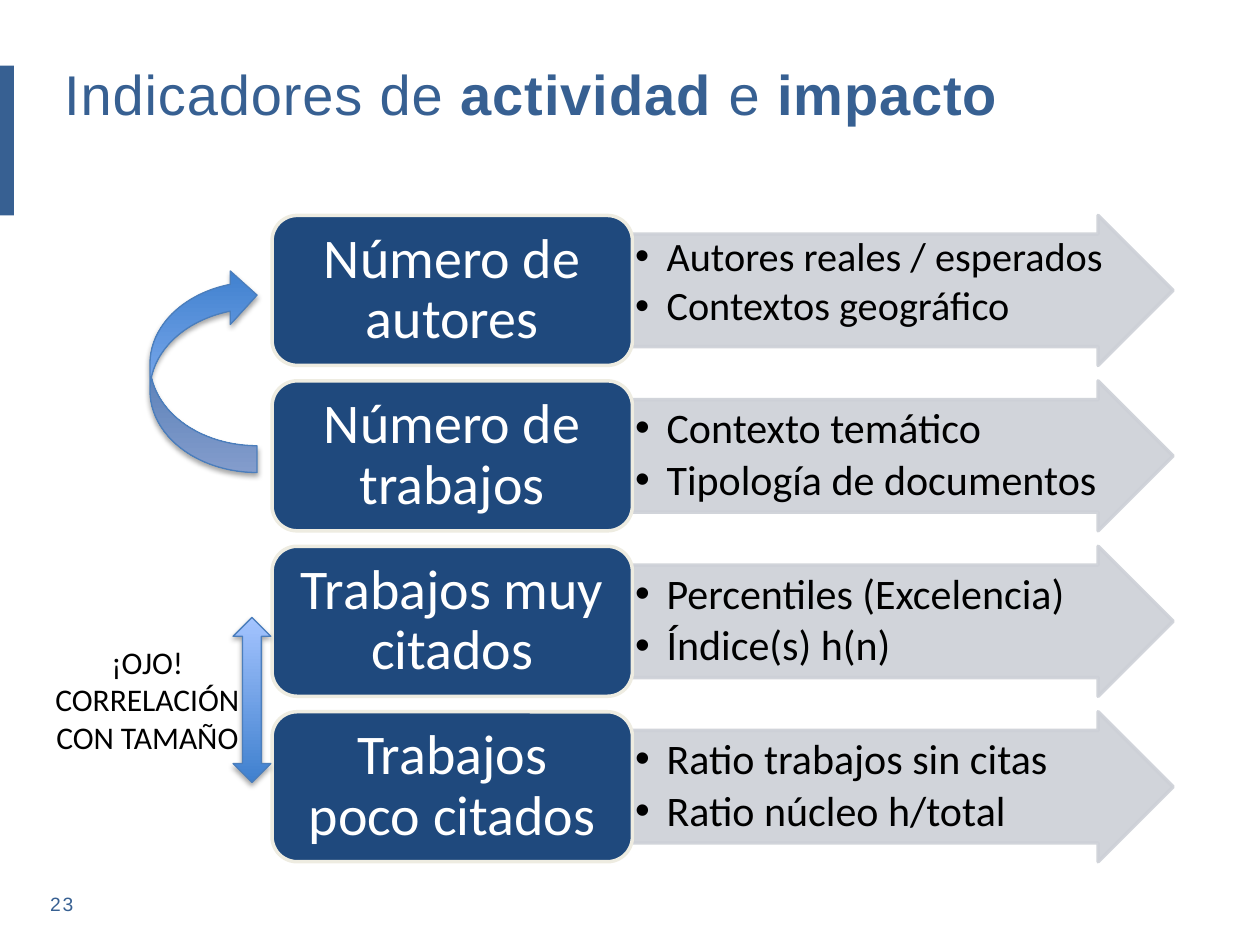
"""Build the slide on activity and impact indicators."""
from lxml.etree import SubElement
from pptx import Presentation
from pptx.dml.color import RGBColor
from pptx.enum.shapes import MSO_SHAPE
from pptx.enum.text import MSO_ANCHOR, MSO_AUTO_SIZE, PP_ALIGN
from pptx.oxml import parse_xml
from pptx.oxml.ns import nsdecls, qn
from pptx.util import Inches, Pt

STEEL = RGBColor(0x37, 0x60, 0x92)
NAVY = RGBColor(0x1F, 0x49, 0x7D)
CREAM = RGBColor(0xEE, 0xEC, 0xE1)
GREY = RGBColor(0xCD, 0xD0, 0xD7)
BLUE_DARK = RGBColor(0x3F, 0x80, 0xCE)
BLUE_LIGHT = RGBColor(0xA4, 0xC4, 0xFF)
BLUE_EDGE = RGBColor(0x4B, 0x7E, 0xBC)
BLACK = RGBColor(0, 0, 0)
WHITE = RGBColor(0xFF, 0xFF, 0xFF)


def write_text(frame, paragraphs, size, color, font="Calibri", align=PP_ALIGN.LEFT,
               anchor=MSO_ANCHOR.TOP, insets=(0.1, 0.05), wrap=True, line_spacing=1.0,
               space_after=0, bullet=False, tracking=0):
    frame.word_wrap = wrap
    frame.auto_size = MSO_AUTO_SIZE.NONE
    frame.vertical_anchor = anchor
    frame.margin_left = frame.margin_right = Inches(insets[0])
    frame.margin_top = frame.margin_bottom = Inches(insets[1])
    for index, runs in enumerate(paragraphs):
        paragraph = frame.paragraphs[0] if index == 0 else frame.add_paragraph()
        paragraph.alignment = align
        paragraph.line_spacing = line_spacing
        paragraph.space_before = Pt(0)
        paragraph.space_after = Pt(space_after)
        if bullet:
            paragraph.level = 1
            properties = paragraph._p.get_or_add_pPr()
            properties.set("marL", str(Inches(0.25)))
            properties.set("indent", str(-Inches(0.25)))
            SubElement(properties, qn("a:buFont"), typeface="Arial")
            SubElement(properties, qn("a:buChar"), char="•")
        for text, bold in [(runs, False)] if isinstance(runs, str) else runs:
            run = paragraph.add_run()
            run.text = text
            run.font.name = font
            run.font.size = Pt(size)
            run.font.bold = bold
            run.font.color.rgb = color
            if tracking:
                run._r.get_or_add_rPr().set("spc", str(int(tracking * 100)))


def add_block(kind, left, top, width, height, fill=None, line=None, line_width=2):
    block = slide.shapes.add_shape(kind, Inches(left), Inches(top), Inches(width), Inches(height))
    block.shadow.inherit = False
    if fill is None:
        block.fill.gradient()
        block.fill.gradient_angle = 90
        for stop, color in zip(block.fill.gradient_stops, (BLUE_DARK, BLUE_LIGHT)):
            stop.color.rgb = color
    else:
        block.fill.solid()
        block.fill.fore_color.rgb = fill
    if line is None:
        block.line.fill.background()
    else:
        block.line.color.rgb = line
        block.line.width = Pt(line_width)
    return block


presentation = Presentation()
presentation.slide_width = Inches(10)
presentation.slide_height = Inches(7.5)
slide = presentation.slides.add_slide(presentation.slide_layouts[5])

page_number = slide.shapes.add_textbox(Inches(0.3), Inches(7.03), Inches(9.25), Inches(0.29))
write_text(page_number.text_frame, ["23"], 11, STEEL, font="Arial", tracking=1)
add_block(MSO_SHAPE.RECTANGLE, 0, 0.52, 0.11, 1.19, STEEL)

title = slide.shapes.title
title.left, title.top = Inches(0.41), Inches(0.42)
title.width, title.height = Inches(9.01), Inches(0.64)
write_text(title.text_frame,
           [[("Indicadores de", False), (" actividad ", True), ("e", False), (" impacto", True)]],
           32, STEEL, font="Arial", tracking=0.5)

indicators = [
    ("Número de autores", ["Autores reales / esperados", "Contextos geográfico"], 23, MSO_ANCHOR.TOP),
    ("Número de trabajos", ["Contexto temático", "Tipología de documentos"], 24, MSO_ANCHOR.MIDDLE),
    ("Trabajos muy citados", ["Percentiles (Excelencia)", "Índice(s) h(n)"], 24, MSO_ANCHOR.MIDDLE),
    ("Trabajos poco citados", ["Ratio trabajos sin citas", "Ratio núcleo h/total"], 24, MSO_ANCHOR.MIDDLE),
]
for row, (indicator, details, size, anchor) in enumerate(indicators):
    top = 1.71 + row * 1.313
    detail_arrow = add_block(MSO_SHAPE.RIGHT_ARROW, 5.02, top, 4.29, 1.19, GREY, GREY)
    detail_arrow.adjustments[0] = 0.75
    for color in detail_arrow._element.spPr.iter(qn("a:srgbClr")):
        SubElement(color, qn("a:alpha"), val="90000")
    write_text(detail_arrow.text_frame, details, size, BLACK, anchor=anchor, insets=(0.02, 0.02),
               line_spacing=0.9, space_after=size * 0.15, bullet=True)
    indicator_box = add_block(MSO_SHAPE.ROUNDED_RECTANGLE, 2.16, top, 2.86, 1.19, NAVY, CREAM)
    write_text(indicator_box.text_frame, [indicator], 32, WHITE, align=PP_ALIGN.CENTER,
               anchor=MSO_ANCHOR.MIDDLE, insets=(0.13, 0.07), line_spacing=0.9)

feedback_arrow = add_block(MSO_SHAPE.CURVED_RIGHT_ARROW, 1.19, 2.13, 0.85, 1.62,
                           line=BLUE_EDGE, line_width=0.75)
feedback_arrow._element.spPr.xfrm.set("flipV", "1")
correlation_arrow = add_block(MSO_SHAPE.UP_DOWN_ARROW, 1.85, 4.9, 0.3, 1.31,
                              line=BLUE_EDGE, line_width=0.75)
for arrow in (feedback_arrow, correlation_arrow):
    arrow._element.spPr.find(qn("a:effectLst")).append(parse_xml(
        f'<a:outerShdw {nsdecls("a")} blurRad="{Pt(3.1)}" dist="{Pt(1.8)}" dir="5400000" '
        'rotWithShape="0"><a:srgbClr val="000000"><a:alpha val="35000"/></a:srgbClr></a:outerShdw>'))

warning = slide.shapes.add_textbox(Inches(0.33), Inches(5.05), Inches(1.68), Inches(1.01))
write_text(warning.text_frame, ["¡OJO!", "CORRELACIÓN", "CON TAMAÑO"], 18, BLACK,
           align=PP_ALIGN.CENTER, wrap=False)

presentation.save("out.pptx")
